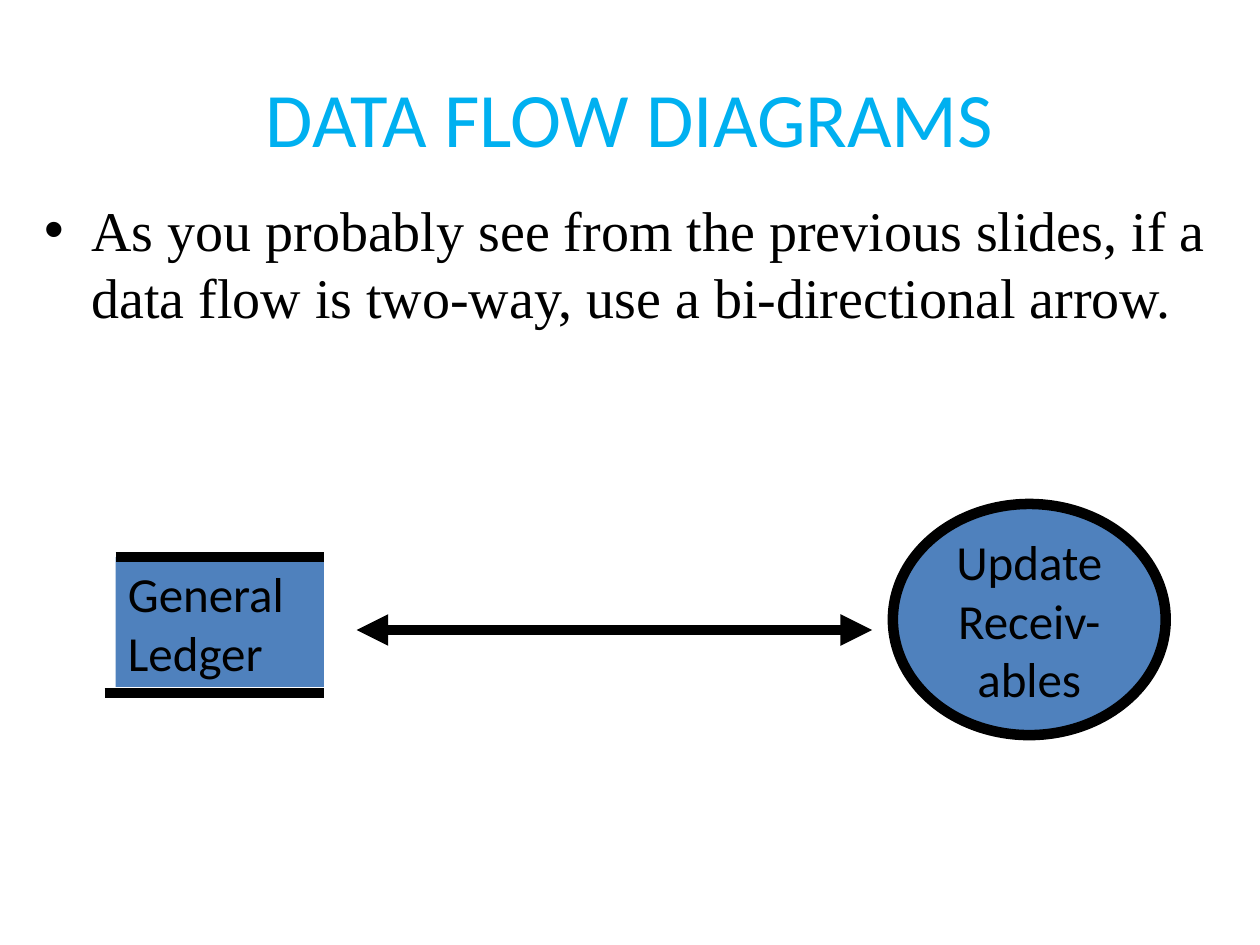
import pptx
import pptx.util
import pptx.dml.color
import pptx.enum.shapes
import pptx.enum.text
import pptx.oxml
import pptx.oxml.ns

Cm, Pt = pptx.util.Cm, pptx.util.Pt
RGBColor = pptx.dml.color.RGBColor
Shape = pptx.enum.shapes.MSO_SHAPE
Align = pptx.enum.text.PP_ALIGN
Anchor = pptx.enum.text.MSO_ANCHOR

SKY = RGBColor(0x00, 0xB0, 0xF0)
BLUE = RGBColor(0x4F, 0x81, 0xBD)
BLACK = RGBColor(0x00, 0x00, 0x00)
STROKE = Pt(6)


def add_child(parent, tag, **attributes):
    child = pptx.oxml.parse_xml(f"<{tag} {pptx.oxml.ns.nsdecls('a')}/>")
    for name, value in attributes.items():
        child.set(name, str(value))
    parent.append(child)


def write_text(shape, lines, size=28, font="Calibri", color=BLACK,
               align=Align.LEFT, anchor=Anchor.TOP, wrap=True, bullet_indent=None):
    frame = shape.text_frame
    frame.word_wrap = wrap
    frame.vertical_anchor = anchor
    for index, line in enumerate(lines):
        para = frame.add_paragraph() if index else frame.paragraphs[0]
        para.alignment = align
        span = para.add_run()
        span.text = line
        span.font.size = Pt(size)
        span.font.name = font
        span.font.color.rgb = color
        if bullet_indent:
            para.space_before = Pt(size * 0.2)
            properties = para._p.get_or_add_pPr()
            properties.set("marL", str(bullet_indent))
            properties.set("indent", str(-bullet_indent))
            add_child(properties, "a:buFont", typeface="Arial")
            add_child(properties, "a:buChar", char="•")


def add_filled(shapes, kind, left, top, width, height, outlined):
    shape = shapes.add_shape(kind, Cm(left), Cm(top), Cm(width), Cm(height))
    shape.shadow.inherit = False
    shape.fill.solid()
    shape.fill.fore_color.rgb = BLUE
    if outlined:
        shape.line.color.rgb = BLACK
        shape.line.width = STROKE
    else:
        shape.line.fill.background()
    return shape


def add_rule(shapes, left, right, y, arrows=False):
    rule = shapes.add_connector(pptx.enum.shapes.MSO_CONNECTOR.STRAIGHT,
                                Cm(left), Cm(y), Cm(right), Cm(y))
    rule.line.color.rgb = BLACK
    rule.line.width = STROKE
    if arrows:
        for end in ("a:headEnd", "a:tailEnd"):
            add_child(rule.line._get_or_add_ln(), end, type="triangle")
    add_child(rule._element.spPr, "a:effectLst")


def add_title(page, left, top, width, height):
    box = page.shapes.add_textbox(Cm(left), Cm(top), Cm(width), Cm(height))
    write_text(box, ["DATA FLOW DIAGRAMS"], size=44, color=SKY,
               align=Align.CENTER, anchor=Anchor.MIDDLE)


def add_body(page, left, top, width, height):
    box = page.shapes.add_textbox(Cm(left), Cm(top), Cm(width), Cm(height))
    write_text(box, ["As you probably see from the previous slides, if a data flow "
                     "is two-way, use a bi-directional arrow."],
               size=32, font="Times New Roman", bullet_indent=Cm(0.95))


def add_data_store(shapes, left, top, width, height):
    store = add_filled(shapes, Shape.RECTANGLE, left, top, width, height, outlined=False)
    write_text(store, ["General", "Ledger"])
    # Open-ended store: a rule above and a slightly longer one below
    add_rule(shapes, left, left + width, top)
    add_rule(shapes, left - 0.22, left + width, top + height + 0.12)


def add_process(shapes, left, top, width, height):
    process = add_filled(shapes, Shape.OVAL, left, top, width, height, outlined=True)
    write_text(process, ["Update", "Receiv-", "ables"], align=Align.CENTER,
               anchor=Anchor.MIDDLE, wrap=False)


def add_diagram(page, left, top, width, height):
    # Process on the right, two-way flow in between, data store on the left
    process_width = 5.5
    process_left = left + width - process_width
    add_process(page.shapes, process_left, top, process_width, height)
    add_rule(page.shapes, left + 4.86, process_left - 0.42, top + 2.54, arrows=True)
    store = page.shapes.add_group_shape()
    add_data_store(store.shapes, left, top + 1.07, 4.2, 2.62)


def main():
    deck = pptx.Presentation()
    deck.slide_width, deck.slide_height = Cm(25.4), Cm(19.05)
    page = deck.slides.add_slide(deck.slide_layouts[6])
    add_title(page, 1.27, 0.76, 22.86, 3.18)
    add_body(page, 0.64, 3.81, 24.33, 5.08)
    add_diagram(page, 2.33, 10.16, 21.17, 4.66)
    deck.save("out.pptx")


if __name__ == "__main__":
    main()
